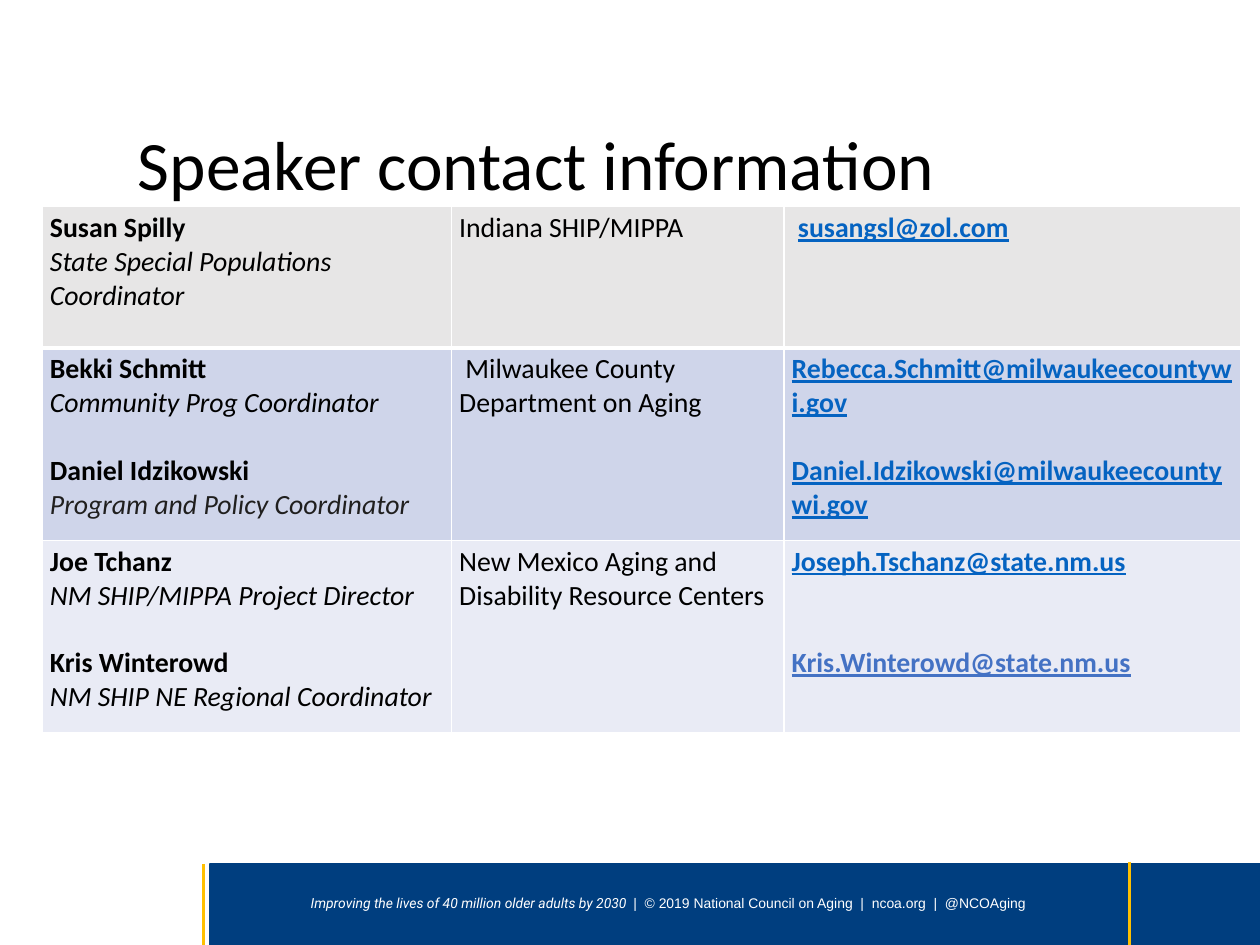
from dataclasses import dataclass

from lxml.etree import SubElement
from pptx import Presentation
from pptx.dml.color import RGBColor
from pptx.enum.shapes import MSO_CONNECTOR as Connector, MSO_SHAPE as Preset
from pptx.enum.text import MSO_ANCHOR as Anchor, MSO_AUTO_SIZE as AutoSize, PP_ALIGN as Align
from pptx.oxml.ns import qn
from pptx.util import Inches, Pt


@dataclass(frozen=True)
class Theme:
    navy: str = "003E7F"
    gold: str = "FFC000"
    white: str = "FFFFFF"
    black: str = "000000"
    charcoal: str = "201F1E"
    link: str = "0563C1"
    accent_link: str = "4472C4"
    row_fills: tuple = ("E7E6E6", "CFD5EA", "E9EBF5")
    font: str = "Calibri"
    title_size: float = 44.9
    table_size: float = 18
    footer_size: float = 9
    line_height: float = 22


theme = Theme()

NAME = dict(bold=True)
ROLE = dict(italic=True)
EMAIL = dict(bold=True, underline=True, color=theme.link)
NEXT_PERSON = dict(gap=1)

TITLE = "Speaker contact information"
SPEAKERS = [
    (
        [("Susan Spilly", NAME), ("State Special Populations Coordinator", ROLE)],
        [("Indiana SHIP/MIPPA", {})],
        [[(" ", NAME), ("susangsl@zol.com", EMAIL)]],
    ),
    (
        [
            ("Bekki Schmitt", NAME),
            ("Community Prog Coordinator", ROLE),
            ("Daniel Idzikowski", NAME | NEXT_PERSON),
            ("Program and Policy Coordinator", ROLE | dict(color=theme.charcoal)),
        ],
        [(" Milwaukee County Department on Aging", {})],
        [
            ("Rebecca.Schmitt@milwaukeecountywi.gov", EMAIL),
            ("Daniel.Idzikowski@milwaukeecountywi.gov", EMAIL | NEXT_PERSON),
        ],
    ),
    (
        [
            ("Joe Tchanz", NAME),
            ("NM SHIP/MIPPA Project Director", ROLE),
            ("Kris Winterowd", NAME | NEXT_PERSON),
            ("NM SHIP NE Regional Coordinator", ROLE),
        ],
        [("New Mexico Aging and Disability Resource Centers", {})],
        [
            ("Joseph.Tschanz@state.nm.us", EMAIL),
            ("Kris.Winterowd@state.nm.us", EMAIL | dict(color=theme.accent_link, gap=2)),
        ],
    ),
]
FOOTER = [
    ("Improving the lives of 40 million older adults by 2030  ", dict(font="Roboto", italic=True)),
    ("|  © 2019 National Council on Aging  |  ncoa.org  |  @NCOAging ", dict(font="Arial")),
]

COLUMN_SHARES = (32.48, 26.39, 36.28)
ROW_SHARES = (14.94, 20.35, 20.35)
FOOTER_TOP = 91.41
BAR_LEFT = 16.68
GOLD_LINES = ((16.15, FOOTER_TOP), (89.67, 91.18))

presentation = Presentation()
presentation.slide_width = Inches(11.33)
presentation.slide_height = Inches(8.5)
slide = presentation.slides.add_slide(presentation.slide_layouts[5])


def across(share):
    return round(presentation.slide_width * share / 100)


def down(share):
    return round(presentation.slide_height * share / 100)


def area(left, top, width, height):
    return across(left), down(top), across(width), down(height)


def add_text(paragraph, text, size=theme.table_size, font=theme.font, color=theme.black,
             bold=False, italic=False, underline=False, gap=0):
    if gap:
        paragraph.space_before = Pt(gap * theme.line_height)
    run = paragraph.add_run()
    run.text = text
    run.font.size = Pt(size)
    run.font.name = font
    run.font.color.rgb = RGBColor.from_string(color)
    run.font.bold = bold
    run.font.italic = italic
    run.font.underline = underline


def set_margins(target, horizontal, vertical):
    target.margin_left = target.margin_right = Inches(horizontal)
    target.margin_top = target.margin_bottom = Inches(vertical)


def add_border(cell, side, width):
    properties = cell._tc.get_or_add_tcPr()
    line = SubElement(properties, qn(f"a:ln{side}"), w=str(Pt(width)))
    fill = SubElement(line, qn("a:solidFill"))
    SubElement(fill, qn("a:srgbClr"), val=theme.white)


def fill_cell(cell, lines, row):
    set_margins(cell, 0.07, 0.04)
    top = 3 if row == 1 else 1
    bottom = 3 if row == 0 else 1
    for side, width in (("L", 1), ("R", 1), ("T", top), ("B", bottom)):
        add_border(cell, side, width)
    cell.fill.solid()
    cell.fill.fore_color.rgb = RGBColor.from_string(theme.row_fills[row])
    frame = cell.text_frame
    for index, line in enumerate(lines):
        paragraph = frame.add_paragraph() if index else frame.paragraphs[0]
        for text, style in line if isinstance(line, list) else [line]:
            add_text(paragraph, text, **style)


def add_footer():
    bar = slide.shapes.add_shape(
        Preset.RECTANGLE, *area(BAR_LEFT, FOOTER_TOP, 100 - BAR_LEFT, 100 - FOOTER_TOP))
    bar.shadow.inherit = False
    bar.fill.solid()
    bar.fill.fore_color.rgb = RGBColor.from_string(theme.navy)
    bar.line.color.rgb = RGBColor.from_string(theme.navy)
    bar.line.width = Pt(1)
    for left, top in GOLD_LINES:
        line = slide.shapes.add_connector(
            Connector.STRAIGHT, across(left), down(top), across(left), down(100))
        line.line.color.rgb = RGBColor.from_string(theme.gold)
        line.line.width = Pt(2)
        SubElement(line._element.spPr, qn("a:effectLst"))
    box = slide.shapes.add_textbox(*area(22.42, FOOTER_TOP, 61.52, 100 - FOOTER_TOP))
    frame = box.text_frame
    frame.word_wrap = True
    frame.vertical_anchor = Anchor.MIDDLE
    set_margins(frame, 0.08, 0.04)
    paragraph = frame.paragraphs[0]
    paragraph.alignment = Align.CENTER
    paragraph.line_spacing = 0.9
    for text, style in FOOTER:
        add_text(paragraph, text, size=theme.footer_size, color=theme.white, **style)


def add_title():
    title = slide.shapes.title
    title.left, title.top, title.width, title.height = area(10.06, 13.76, 80.85, 8.12)
    frame = title.text_frame
    frame.auto_size = AutoSize.NONE
    frame.vertical_anchor = Anchor.MIDDLE
    paragraph = frame.paragraphs[0]
    paragraph.alignment = Align.LEFT
    paragraph.line_spacing = 0.9
    add_text(paragraph, TITLE, size=theme.title_size)


def add_speaker_table():
    frame = slide.shapes.add_table(
        len(ROW_SHARES), len(COLUMN_SHARES),
        *area(3.35, 21.88, sum(COLUMN_SHARES), sum(ROW_SHARES)))
    table = frame.table
    table.first_row = table.horz_banding = False
    for column, share in zip(table.columns, COLUMN_SHARES):
        column.width = across(share)
    for row, share in zip(table.rows, ROW_SHARES):
        row.height = down(share)
    for row, cells in enumerate(SPEAKERS):
        for column, lines in enumerate(cells):
            fill_cell(table.cell(row, column), lines, row)


add_footer()
add_title()
add_speaker_table()
presentation.save("out.pptx")
